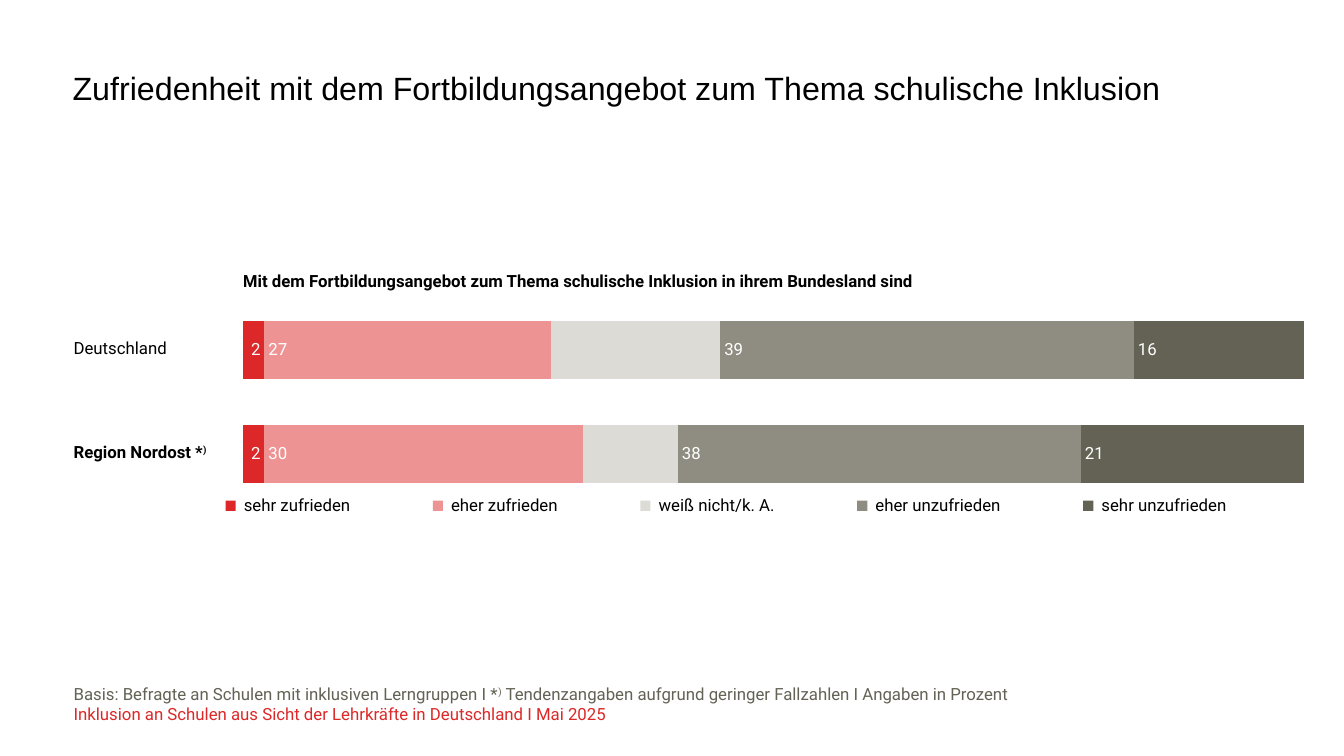
from dataclasses import dataclass
from typing import Any, Optional

from lxml import etree
from pptx import Presentation
from pptx.chart import data as chart_data
from pptx.dml.color import RGBColor
from pptx.enum import chart as chart_enum, text as text_enum
from pptx.oxml import ns
from pptx.util import Inches, Pt

BLACK = RGBColor(0x00, 0x00, 0x00)
WHITE = RGBColor(0xFF, 0xFF, 0xFF)
RED = RGBColor(0xDC, 0x28, 0x28)
ROSE = RGBColor(0xED, 0x93, 0x93)
LIGHT_GREY = RGBColor(0xDC, 0xDB, 0xD5)
MID_GREY = RGBColor(0x8F, 0x8D, 0x81)
DARK_GREY = RGBColor(0x63, 0x62, 0x55)
BODY_FONT = "Roboto"

LabelPosition = chart_enum.XL_LABEL_POSITION
Anchor = text_enum.MSO_ANCHOR


@dataclass
class Run:
    text: str
    color: RGBColor = BLACK
    size: float = 12
    font: str = BODY_FONT
    bold: bool = False
    superscript: bool = False


@dataclass
class Line:
    runs: list[Run]
    spacing: float = 1.0


@dataclass
class Answer:
    name: str
    values: tuple[int, int]
    color: RGBColor
    label_position: Optional[Any] = LabelPosition.INSIDE_BASE


@dataclass
class Box:
    left: float
    top: float
    width: float
    height: float

    def lengths(self) -> tuple:
        return Inches(self.left), Inches(self.top), Inches(self.width), Inches(self.height)


ANSWERS = [
    Answer(" sehr zufrieden", (2, 2), RED, LabelPosition.INSIDE_END),
    Answer(" eher zufrieden", (27, 30), ROSE),
    Answer(" weiß nicht/k. A.", (16, 9), LIGHT_GREY, None),
    Answer(" eher unzufrieden", (39, 38), MID_GREY),
    Answer(" sehr unzufrieden", (16, 21), DARK_GREY),
]


def write_lines(frame: Any, lines: list[Line]) -> None:
    for index, line in enumerate(lines):
        paragraph = frame.add_paragraph() if index else frame.paragraphs[0]
        paragraph.line_spacing = line.spacing
        for item in line.runs:
            run = paragraph.add_run()
            run.text = item.text
            run.font.name = item.font
            run.font.size = Pt(item.size)
            run.font.bold = item.bold
            run.font.color.rgb = item.color
            if item.superscript:
                run._r.get_or_add_rPr().set("baseline", "30000")


def clear_margins(target: Any) -> None:
    target.margin_left = target.margin_right = 0
    target.margin_top = target.margin_bottom = 0


def add_text(slide: Any, box: Box, lines: list[Line]) -> None:
    frame = slide.shapes.add_textbox(*box.lengths()).text_frame
    frame.word_wrap = True
    clear_margins(frame)
    write_lines(frame, lines)


def add_label_table(slide: Any, box: Box, rows: list[Line], anchor: Any) -> None:
    table = slide.shapes.add_table(len(rows), 1, *box.lengths()).table
    table.first_row = False
    table.horz_banding = False
    for index, line in enumerate(rows):
        cell = table.cell(index, 0)
        cell.fill.background()
        clear_margins(cell)
        cell.vertical_anchor = anchor
        write_lines(cell.text_frame, [line])


def make_layout(area: Box, inner: bool = False) -> Any:
    layout = etree.Element(ns.qn("c:layout"))
    manual = etree.SubElement(layout, ns.qn("c:manualLayout"))
    settings = [("layoutTarget", "inner")] if inner else []
    settings += [("xMode", "edge"), ("yMode", "edge")]
    settings += [("x", area.left), ("y", area.top), ("w", area.width), ("h", area.height)]
    for tag, value in settings:
        etree.SubElement(manual, ns.qn(f"c:{tag}")).set("val", str(value))
    return layout


def place_plot(chart: Any, area: Box) -> None:
    plot_area = chart._chartSpace.chart.plotArea
    for layout in plot_area.findall(ns.qn("c:layout")):
        plot_area.remove(layout)
    plot_area.insert(0, make_layout(area, inner=True))


def place_legend(legend: Any, area: Box) -> None:
    element = legend._element
    for layout in element.findall(ns.qn("c:layout")):
        element.remove(layout)
    element.find(ns.qn("c:legendPos")).addnext(make_layout(area))


def add_answer_chart(slide: Any, box: Box) -> None:
    data = chart_data.CategoryChartData()
    data.categories = ["1", "2"]
    for answer in ANSWERS:
        data.add_series(answer.name, answer.values)
    chart = slide.shapes.add_chart(
        chart_enum.XL_CHART_TYPE.BAR_STACKED, *box.lengths(), data
    ).chart
    chart.has_title = False
    chart.font.name = BODY_FONT
    chart.font.size = Pt(12)
    chart.font.color.rgb = BLACK
    chart.category_axis.reverse_order = True
    chart.category_axis.visible = False
    axis = chart.value_axis
    axis.minimum_scale, axis.maximum_scale, axis.major_unit = 0, 100, 20
    axis.has_major_gridlines = False
    axis.visible = False
    plot = chart.plots[0]
    plot.gap_width = 80
    plot.overlap = 100
    plot.vary_by_categories = False
    for answer, series in zip(ANSWERS, plot.series):
        series.format.fill.solid()
        series.format.fill.fore_color.rgb = answer.color
        if answer.label_position is not None:
            labels = series.data_labels
            labels.show_value = True
            labels.position = answer.label_position
            labels.font.name = BODY_FONT
            labels.font.size = Pt(12)
            labels.font.color.rgb = WHITE
    chart.has_legend = True
    chart.legend.position = chart_enum.XL_LEGEND_POSITION.BOTTOM
    chart.legend.include_in_layout = False
    place_plot(chart, Box(0.091, 0.194, 0.909, 0.456))
    place_legend(chart.legend, Box(0.01, 0.61, 0.99, 0.08))


def main() -> None:
    presentation = Presentation()
    presentation.slide_width = Inches(13.33)
    presentation.slide_height = Inches(7.5)
    slide = presentation.slides.add_slide(presentation.slide_layouts[6])

    add_answer_chart(slide, Box(1.36, 2.08, 11.57, 4.52))
    title = "Zufriedenheit mit dem Fortbildungsangebot zum Thema schulische Inklusion"
    add_text(slide, Box(0.72, 0.72, 12.21, 0.91), [Line([Run(title, size=23, font="Arial")], 0.9)])
    basis = Line([
        Run("Basis: Befragte an Schulen mit inklusiven Lerngruppen I *", DARK_GREY),
        Run(")", DARK_GREY, superscript=True),
        Run(" Tendenzangaben aufgrund geringer Fallzahlen I Angaben in Prozent", DARK_GREY),
    ], 0.85)
    study = "Inklusion an Schulen aus Sicht der Lehrkräfte in Deutschland I Mai 2025"
    add_text(slide, Box(0.73, 6.81, 11.09, 0.42), [basis, Line([Run(study, RED)])])

    question = "Mit dem Fortbildungsangebot zum Thema schulische Inklusion in ihrem Bundesland sind"
    add_label_table(slide, Box(2.41, 2.67, 10.54, 0.22),
                    [Line([Run(question, bold=True)], 0.85)], Anchor.BOTTOM)
    regions = [
        Line([Run("Deutschland")]),
        Line([Run("Region Nordost *", bold=True), Run(")", bold=True, superscript=True)]),
    ]
    add_label_table(slide, Box(0.73, 2.94, 1.49, 2.07), regions, Anchor.MIDDLE)
    presentation.save("out.pptx")


if __name__ == "__main__":
    main()
